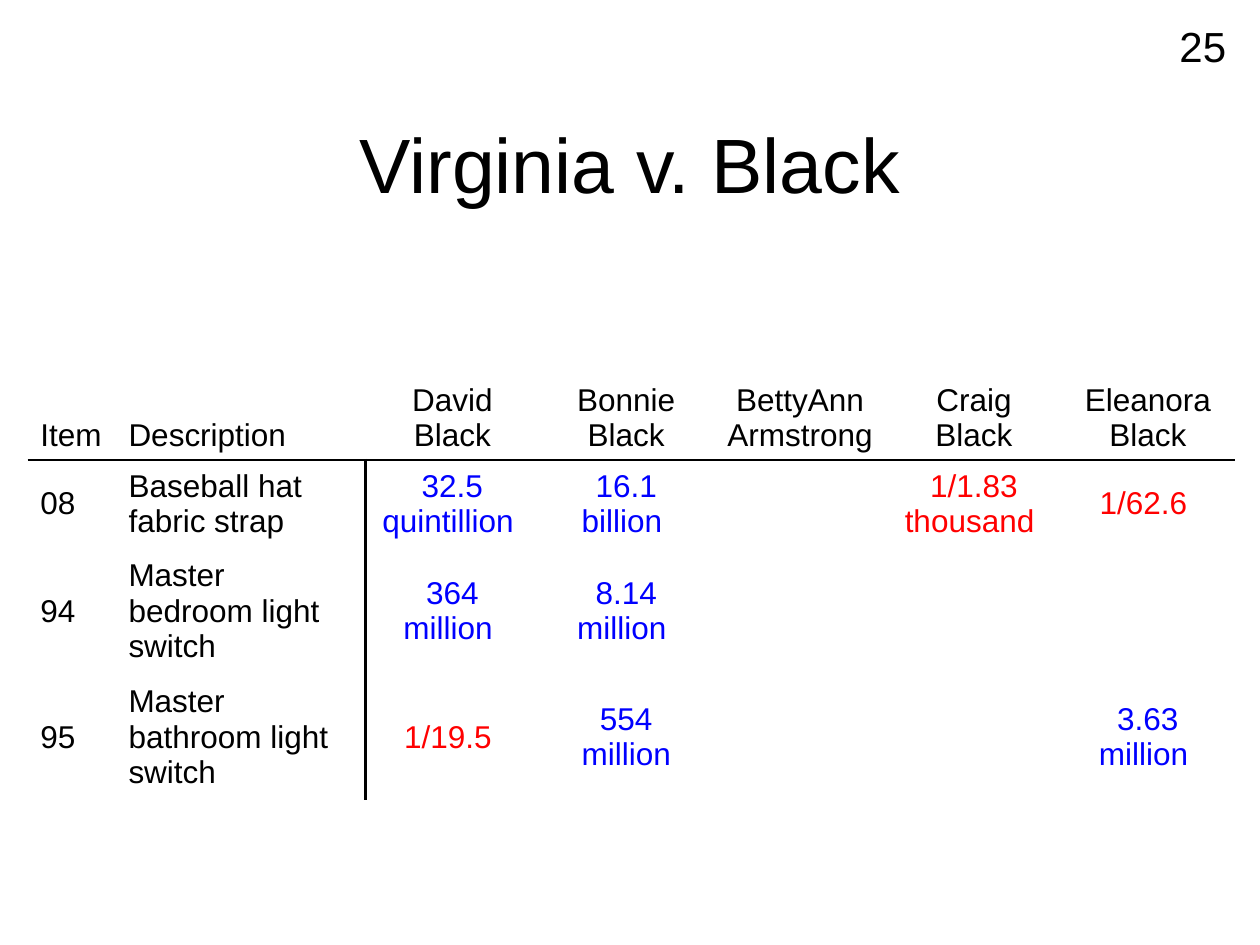
from dataclasses import dataclass

from lxml.etree import SubElement
from pptx import Presentation
from pptx.dml.color import RGBColor as RGB
from pptx.enum.text import MSO_ANCHOR as Anchor, PP_ALIGN as Align
from pptx.oxml.ns import qn
from pptx.util import Inches, Pt


@dataclass(frozen=True)
class Theme:
    font: str = "Arial"
    title: int = 44
    number: int = 24
    body: int = 18
    rule: float = 1.5
    black: str = "000000"
    blue: str = "0000FF"
    red: str = "FF0000"


THEME = Theme()
NO_STYLE = "{2D5ABB26-0587-4C30-8999-92F81FD0307C}"

HEADERS = ["Item", "Description", "David Black", "Bonnie Black",
           "BettyAnn Armstrong", "Craig Black", "Eleanora Black"]
ITEMS = [
    ["08", "Baseball hat fabric strap", "32.5 quintillion ", "16.1 billion ",
     "", "1/1.83 thousand ", "1/62.6 "],
    ["94", "Master bedroom light switch", "364 million ", "8.14 million ",
     "", "", ""],
    ["95", "Master bathroom light switch", "1/19.5 ", "554 million",
     "", "", "3.63 million "],
]
COL_WIDTHS = [0.7, 1.98] + [1.38] * 5
ROW_HEIGHTS = [1.3, 0.7, 1, 1]
FIRST_PERSON = 2  # first column that holds a likelihood ratio


def write(tf, text, size, color=THEME.black, align=Align.LEFT):
    tf.text = text
    p = tf.paragraphs[0]
    p.alignment = align
    p.font.size = Pt(size)
    for r in p.runs:
        r.font.size = Pt(size)
        r.font.name = THEME.font
        r.font.color.rgb = RGB.from_string(color)


def add_title(s, text):
    sp = s.shapes.title
    sp.left, sp.top = Inches(0.75), Inches(0.67)
    sp.width, sp.height = Inches(8.5), Inches(1.25)
    sp.text_frame.vertical_anchor = Anchor.MIDDLE
    write(sp.text_frame, text, THEME.title, align=Align.CENTER)


def add_number(s, text):
    sp = s.shapes.add_textbox(Inches(8.92), Inches(0.11), Inches(0.91), Inches(0.46))
    sp.text_frame.word_wrap = True
    write(sp.text_frame, text, THEME.number, align=Align.RIGHT)


def set_border(cell, side, shown):
    """Draw one side of a cell, or clear it explicitly."""
    ln = SubElement(cell._tc.get_or_add_tcPr(), qn(f"a:ln{side}"))
    if shown:
        ln.set("w", str(Pt(THEME.rule)))
        fill = SubElement(ln, qn("a:solidFill"))
        SubElement(fill, qn("a:srgbClr"), val=THEME.black)
    else:
        SubElement(ln, qn("a:noFill"))


def ratio_color(text):
    """Red for ratios below one, blue for the others."""
    return THEME.red if text.startswith("1/") else THEME.blue


def format_cell(cell, row, col, text):
    is_header, is_person = row == 0, col >= FIRST_PERSON
    color = ratio_color(text) if is_person and not is_header else THEME.black
    write(cell.text_frame, text, THEME.body, color,
          Align.CENTER if is_person else Align.LEFT)
    cell.vertical_anchor = Anchor.BOTTOM if is_header else Anchor.MIDDLE

    # Rules below the header and right of the description
    borders = {
        "L": not is_header and col == FIRST_PERSON,
        "R": not is_header and col == FIRST_PERSON - 1,
        "T": row == 1,
        "B": is_header,
    }
    for side, shown in borders.items():
        set_border(cell, side, shown)
    cell.fill.background()


def add_ratio_table(s):
    rows = [HEADERS] + ITEMS
    frame = s.shapes.add_table(len(rows), len(HEADERS), Inches(0.22), Inches(2.35),
                               Inches(sum(COL_WIDTHS)), Inches(sum(ROW_HEIGHTS)))
    table = frame.table
    table.first_row = table.horz_banding = False
    table._tbl.tblPr.find(qn("a:tableStyleId")).text = NO_STYLE
    for column, width in zip(table.columns, COL_WIDTHS):
        column.width = Inches(width)
    for row, height in zip(table.rows, ROW_HEIGHTS):
        row.height = Inches(height)
    for i, values in enumerate(rows):
        for j, text in enumerate(values):
            format_cell(table.cell(i, j), i, j, text)


def main():
    prs = Presentation()
    prs.slide_width, prs.slide_height = Inches(10), Inches(7.5)
    s = prs.slides.add_slide(prs.slide_layouts[5])

    # Heading and slide number
    add_title(s, "Virginia v. Black")
    add_number(s, "25")

    # Likelihood ratios by item and person
    add_ratio_table(s)
    prs.save("out.pptx")


if __name__ == "__main__":
    main()
